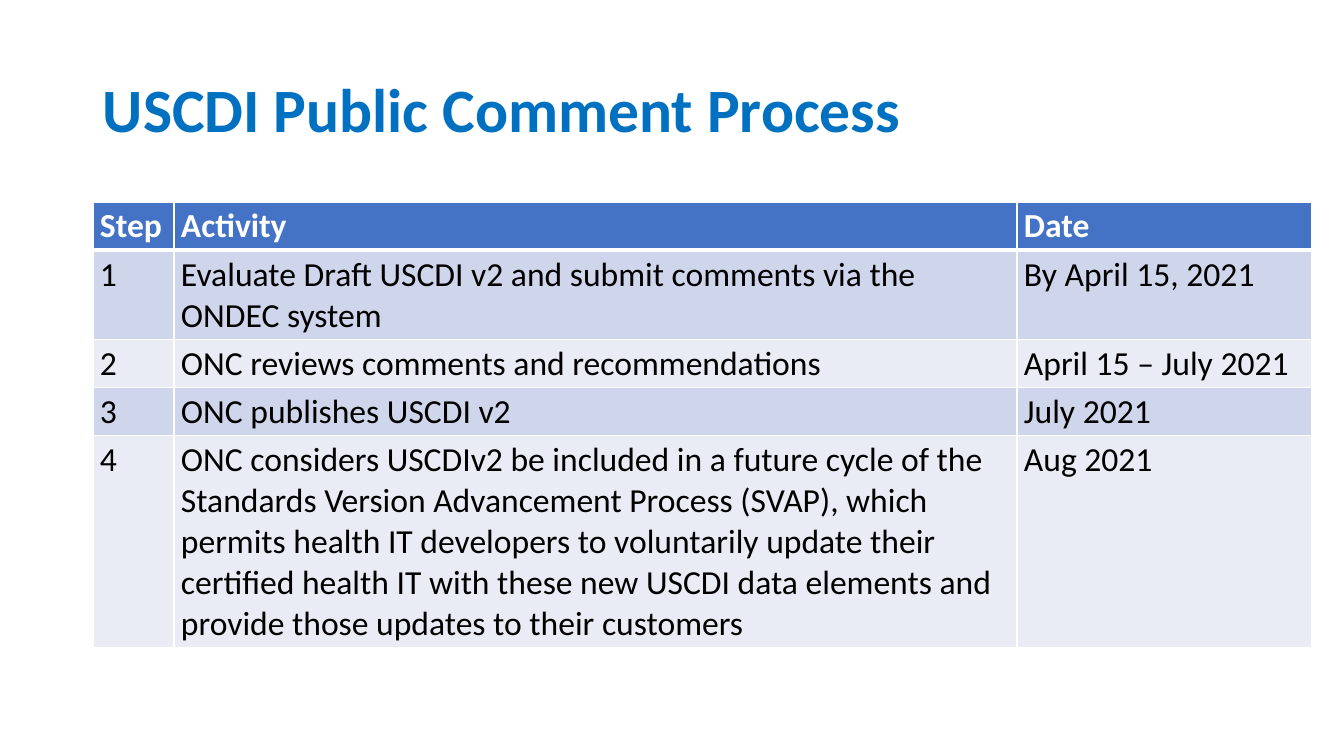
from lxml.etree import SubElement
from pptx import Presentation
from pptx.dml.color import RGBColor
from pptx.enum.text import MSO_ANCHOR
from pptx.oxml.ns import qn
from pptx.util import Emu, Pt

PX_PER_INCH = 100.8
FONT = "Calibri"
WHITE, BLACK = "FFFFFF", "000000"
TITLE_BLUE, HEADER_BLUE = "0070C0", "4472C4"
BANDS = ("CFD5EA", "E9EBF5")

TITLE = "USCDI Public Comment Process"
COLUMN_WIDTHS = (81, 843, 295)
ROW_HEIGHTS = (48, 89, 48, 48, 212)
STEPS = (
    ("Step", "Activity", "Date"),
    ("1", "Evaluate Draft USCDI v2 and submit comments via the ONDEC system",
     "By April 15, 2021"),
    ("2", "ONC reviews comments and recommendations", "April 15 – July 2021"),
    ("3", "ONC publishes USCDI v2", "July 2021"),
    ("4", "ONC considers USCDIv2 be included in a future cycle of the Standards "
          "Version Advancement Process (SVAP), which permits health IT developers "
          "to voluntarily update their certified health IT with these new USCDI "
          "data elements and provide those updates to their customers",
     "Aug 2021"),
)


def px(length):
    return Emu(round(length * 914400 / PX_PER_INCH))


def color(hex_string):
    return RGBColor.from_string(hex_string)


def format_text(text_frame, size, hex_string, bold):
    for paragraph in text_frame.paragraphs:
        for run in paragraph.runs:
            run.font.name = FONT
            run.font.size = Pt(size)
            run.font.bold = bold
            run.font.color.rgb = color(hex_string)


def set_borders(cell, bottom_width):
    """Draw white cell borders, placed before the fill as the schema requires."""
    properties = cell._tc.get_or_add_tcPr()
    widths = {"a:lnL": 1, "a:lnR": 1, "a:lnT": 1, "a:lnB": bottom_width}
    for index, (tag, width) in enumerate(widths.items()):
        line = SubElement(properties, qn(tag), w=str(Pt(width)))
        fill = SubElement(line, qn("a:solidFill"))
        SubElement(fill, qn("a:srgbClr"), val=WHITE)
        properties.insert(index, line)


def add_title(slide, left, top, width, height):
    title = slide.shapes.add_textbox(px(left), px(top), px(width), px(height))
    text_frame = title.text_frame
    text_frame.word_wrap = True
    text_frame.vertical_anchor = MSO_ANCHOR.MIDDLE
    text_frame.text = TITLE
    text_frame.paragraphs[0].line_spacing = 0.9
    format_text(text_frame, 44, TITLE_BLUE, True)


def fill_cell(cell, text, row_index):
    is_header = row_index == 0
    cell.text = text
    cell.margin_left = cell.margin_right = px(7)
    cell.margin_top = cell.margin_bottom = px(4)
    cell.fill.solid()
    background = HEADER_BLUE if is_header else BANDS[(row_index - 1) % 2]
    cell.fill.fore_color.rgb = color(background)
    format_text(cell.text_frame, 24, WHITE if is_header else BLACK, is_header)
    set_borders(cell, 3 if is_header else 1)


def add_steps_table(slide, left, top):
    frame = slide.shapes.add_table(
        len(STEPS), len(COLUMN_WIDTHS), px(left), px(top),
        px(sum(COLUMN_WIDTHS)), px(sum(ROW_HEIGHTS)))
    table = frame.table
    for column, width in zip(table.columns, COLUMN_WIDTHS):
        column.width = px(width)
    for row_index, (row, height) in enumerate(zip(table.rows, ROW_HEIGHTS)):
        row.height = px(height)
        for cell, text in zip(row.cells, STEPS[row_index]):
            fill_cell(cell, text, row_index)


def main():
    presentation = Presentation()
    presentation.slide_width, presentation.slide_height = px(1344), px(756)
    slide = presentation.slides.add_slide(presentation.slide_layouts[6])
    add_title(slide, 93, 40, 1159, 146)
    add_steps_table(slide, 93, 202)
    presentation.save("out.pptx")


if __name__ == "__main__":
    main()
